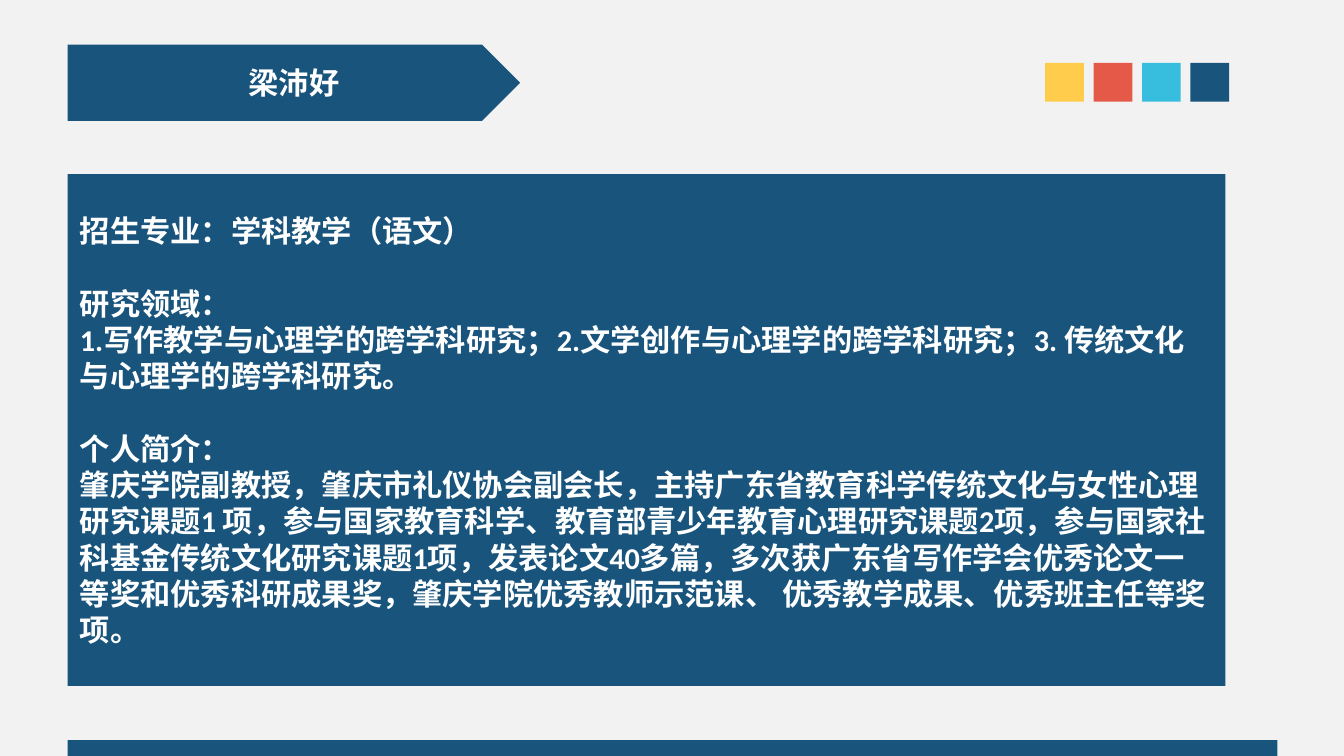
from pptx import Presentation
from pptx.dml.color import RGBColor
from pptx.enum.shapes import MSO_SHAPE as Kind
from pptx.enum.text import MSO_ANCHOR as Anchor, MSO_AUTO_SIZE as Fit, PP_ALIGN as Align
from pptx.oxml.ns import qn
from pptx.util import Inches, Pt
from lxml.etree import SubElement

HUES = {"back": "F2F2F2", "blue": "19547C", "gold": "FFCC4C",
        "red": "E55948", "sky": "37BEDE", "white": "FFFFFF"}
LINE = 21.6  # line pitch in points

deck = Presentation()
deck.slide_width, deck.slide_height = Inches(11.11), Inches(6.25)
wide, high = deck.slide_width, deck.slide_height
slide = deck.slides.add_slide(deck.slide_layouts[1])
slide.background.fill.solid()
slide.background.fill.fore_color.rgb = RGBColor.from_string(HUES["back"])


def block(kind, hue, x, y, w, h):
    """Add a plain filled shape, placed in percent of the slide's size."""
    shape = slide.shapes.add_shape(kind, int(wide * x / 100), int(high * y / 100),
                                   int(wide * w / 100), int(high * h / 100))
    shape.fill.solid()
    shape.fill.fore_color.rgb = RGBColor.from_string(HUES[hue])
    shape.line.fill.background()
    shape.shadow.inherit = False
    return shape


def write(holder, base, paras, font="Calibri", align=Align.LEFT, wrap=True):
    """Lay a placeholder over a base shape and fill it with (text, gap) pairs."""
    holder.left, holder.top = base.left, base.top
    holder.width, holder.height = base.width, base.height
    base.element.addnext(holder.element)
    frame = holder.text_frame
    frame.word_wrap, frame.auto_size = wrap, Fit.NONE
    frame.vertical_anchor = Anchor.MIDDLE
    for i, (text, gap) in enumerate(paras):
        para = frame.add_paragraph() if i else frame.paragraphs[0]
        para.alignment, para.line_spacing = align, Pt(LINE)
        para.space_before, para.space_after = Pt(gap), Pt(0)
        props = para._p.get_or_add_pPr()
        props.set("marL", "0")
        props.set("indent", "0")
        SubElement(props, qn("a:buNone"))
        run = para.add_run()
        run.text = text
        run.font.name, run.font.size, run.font.bold = font, Pt(18), True
        run.font.color.rgb = RGBColor.from_string(HUES["white"])
        east = SubElement(run._r.get_or_add_rPr(), qn("a:ea"))
        east.set("typeface", "Noto Sans CJK SC")


banner = block(Kind.PENTAGON, "blue", 5.04, 5.92, 33.66, 10.08)
write(slide.shapes.title, banner, [("梁沛好", 0)],
      font="Noto Sans CJK SC", align=Align.CENTER, wrap=False)

block(Kind.RECTANGLE, "blue", 5.04, 97.92, 90, 2.08)
for col, hue in enumerate(["gold", "red", "sky", "blue"]):
    block(Kind.RECTANGLE, hue, 77.77 + 3.6 * col, 8.32, 2.88, 5.12)

panel = block(Kind.RECTANGLE, "blue", 5.04, 23.04, 86.14, 67.68)
write(slide.placeholders[1], panel, [
    ("招生专业：学科教学（语文）", 0),
    ("研究领域：", LINE),
    ("1.写作教学与心理学的跨学科研究；2.文学创作与心理学的跨学科研究；"
     "3. 传统文化与心理学的跨学科研究。", 0),
    ("个人简介：", LINE),
    ("肇庆学院副教授，肇庆市礼仪协会副会长，主持广东省教育科学传统文化与女性心理"
     "研究课题1 项，参与国家教育科学、教育部青少年教育心理研究课题2项，参与国家"
     "社科基金传统文化研究课题1项，发表论文40多篇，多次获广东省写作学会优秀论文"
     "一等奖和优秀科研成果奖，肇庆学院优秀教师示范课、 优秀教学成果、优秀班主任等"
     "奖项。", 0),
])

deck.save("out.pptx")
